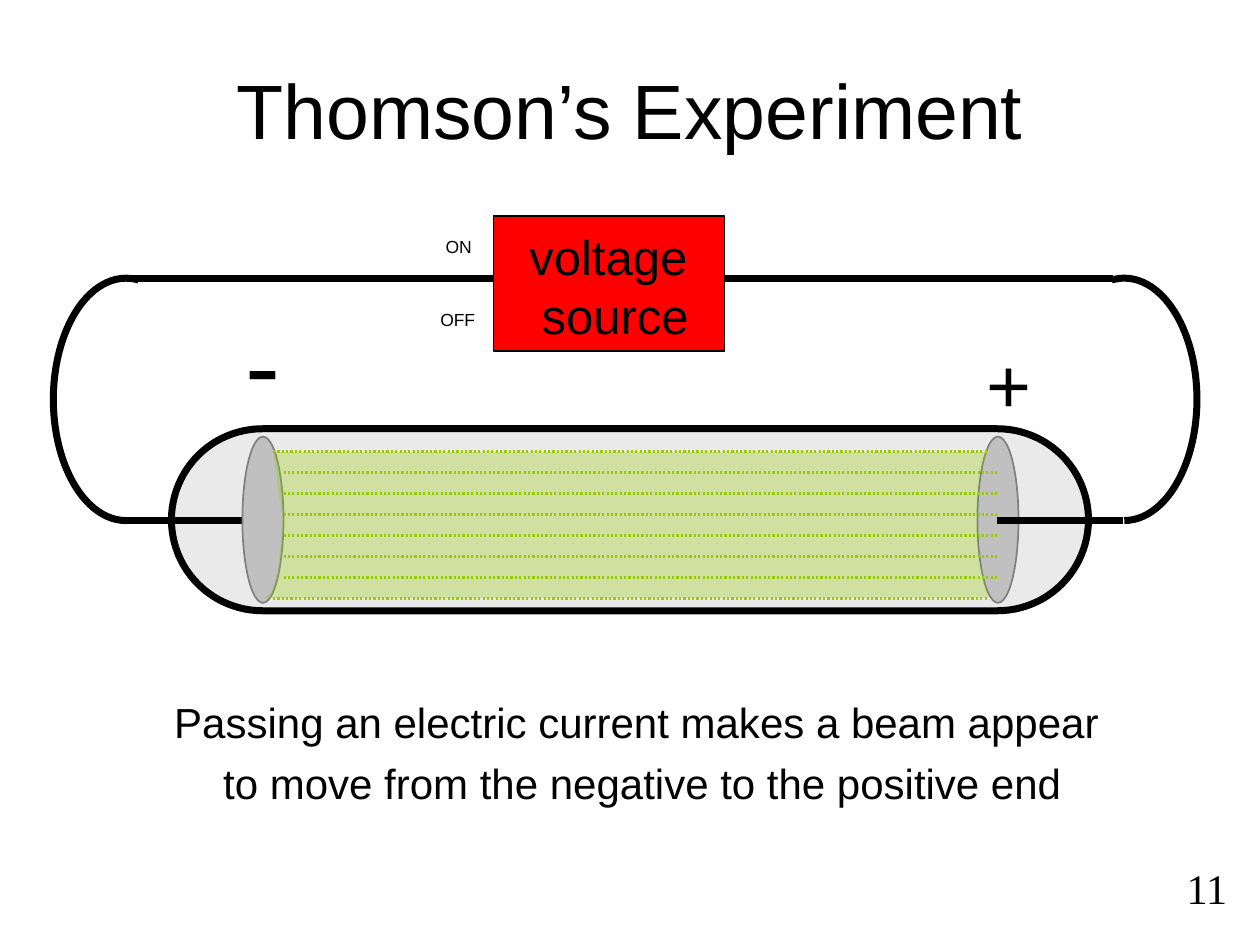
from lxml import etree
from pptx import Presentation
from pptx.dml.color import RGBColor
from pptx.enum.dml import MSO_LINE
from pptx.enum.shapes import MSO_CONNECTOR, MSO_SHAPE
from pptx.enum.text import MSO_AUTO_SIZE, PP_ALIGN
from pptx.oxml.ns import qn
from pptx.util import Pt

STRAIGHT = MSO_CONNECTOR.STRAIGHT
RECTANGLE, ROUNDED = MSO_SHAPE.RECTANGLE, MSO_SHAPE.ROUNDED_RECTANGLE
OVAL, ARC = MSO_SHAPE.OVAL, MSO_SHAPE.ARC
DOTTED = MSO_LINE.ROUND_DOT
LEFT, CENTER = PP_ALIGN.LEFT, PP_ALIGN.CENTER
FIT_SHAPE = MSO_AUTO_SIZE.SHAPE_TO_FIT_TEXT

COLORS = {
    "black": "000000",
    "glass": "C0C0C0",
    "rim": "808080",
    "source": "FF0000",
    "beam": "99CC00",
}
WIRE = 4  # width of wires and tube wall
WIRE_TOP, WIRE_BOTTOM = 159, 297.5


def color(name):
    return RGBColor.from_string(COLORS[name])


def style_shape(shape, fill=None, opacity=100, line=None, line_width=1):
    shape.shadow.inherit = False
    if fill:
        shape.fill.solid()
        shape.fill.fore_color.rgb = color(fill)
        if opacity < 100:
            fill_color = shape.fill._xPr.find(qn("a:solidFill"))[0]
            alpha = etree.SubElement(fill_color, qn("a:alpha"))
            alpha.set("val", str(opacity * 1000))
    else:
        shape.fill.background()
    if line:
        shape.line.color.rgb = color(line)
        shape.line.width = Pt(line_width)
    else:
        shape.line.fill.background()


def add_shape(slide, kind, left, top, width, height, **style):
    shape = slide.shapes.add_shape(kind, Pt(left), Pt(top), Pt(width), Pt(height))
    style_shape(shape, **style)
    return shape


def add_line(slide, x1, y1, x2, y2, line="black", line_width=WIRE, dash=None):
    connector = slide.shapes.add_connector(STRAIGHT, Pt(x1), Pt(y1), Pt(x2), Pt(y2))
    connector.line.color.rgb = color(line)
    connector.line.width = Pt(line_width)
    if dash:
        connector.line.dash_style = dash
    etree.SubElement(connector._element.spPr, qn("a:effectLst"))


def add_text(slide, text, left, top, width, height, size,
             align=LEFT, font="Arial", wrap=False, space_before=0):
    box = slide.shapes.add_textbox(Pt(left), Pt(top), Pt(width), Pt(height))
    text_frame = box.text_frame
    text_frame.word_wrap = wrap
    text_frame.auto_size = FIT_SHAPE
    text_frame.text = text
    for paragraph in text_frame.paragraphs:
        paragraph.alignment = align
        paragraph.space_before = Pt(space_before)
        for run in paragraph.runs:
            run.font.name = font
            run.font.size = Pt(size)
            run.font.color.rgb = color("black")


def add_wire_bend(slide, center_x, start, end):
    """Half an ellipse, clockwise between two angles in degrees."""
    radius = 41.5
    bend = add_shape(slide, ARC, center_x - radius, WIRE_TOP, 2 * radius,
                     WIRE_BOTTOM - WIRE_TOP, line="black", line_width=WIRE)
    # Angles are stored in 60000ths, adjustments scaled by 100000
    bend.adjustments[0] = start * 0.6
    bend.adjustments[1] = end * 0.6


def add_electrode(slide, left):
    add_shape(slide, OVAL, left, 249.5, 23.5, 95, fill="glass", line="rim")


def add_beam_lines(slide):
    count = 8
    for index in range(count):
        start = 156 if index in (0, count - 1) else 162
        y = 258 + 12 * index
        add_line(slide, start, y, start + 408, y, "beam", 1.25, DOTTED)


def add_beam(slide):
    points = [(156, 258), (564, 258), (559.5, 273), (558, 298), (559.5, 321),
              (565, 341.5), (150, 342), (155, 339), (159, 326), (161.5, 297)]
    first, *rest = [(Pt(x), Pt(y)) for x, y in points]
    builder = slide.shapes.build_freeform(*first)
    builder.add_line_segments(rest, close=True)
    style_shape(builder.convert_to_shape(), fill="beam", opacity=31)


def main():
    presentation = Presentation()
    presentation.slide_width, presentation.slide_height = Pt(720), Pt(540)
    slide = presentation.slides.add_slide(presentation.slide_layouts[6])

    # Title and pole signs
    add_text(slide, "Thomson’s Experiment", 47, 32.4, 626, 60, 44, CENTER, wrap=True)
    add_text(slide, "+", 556.5, 188.5, 40, 60, 44)
    add_text(slide, "-", 133, 167, 34.5, 79, 60)

    # Glass tube
    tube = add_shape(slide, ROUNDED, 98, 245, 524, 104,
                     fill="glass", opacity=32, line="black", line_width=WIRE)
    tube.adjustments[0] = 0.5

    # Electrodes and circuit
    add_electrode(slide, 558.5)
    add_line(slide, 144, WIRE_BOTTOM, 72, WIRE_BOTTOM)
    add_wire_bend(slide, 72, 90, 276)
    add_line(slide, 569.5, WIRE_BOTTOM, 642, WIRE_BOTTOM)
    add_wire_bend(slide, 642.5, 264, 90)
    add_line(slide, 72, WIRE_TOP, 636, WIRE_TOP)
    add_electrode(slide, 138.5)

    # Voltage source and switch labels
    add_shape(slide, RECTANGLE, 282, 123.5, 132, 77, fill="source", line="black")
    add_text(slide, "voltage \nsource", 295, 126, 113, 74, 28, CENTER)
    add_text(slide, "OFF", 244.5, 173, 34.5, 19.5, 10)
    add_text(slide, "ON", 247.5, 131.5, 29.5, 19.5, 10)

    # Beam
    add_beam_lines(slide)
    add_beam(slide)

    # Explanation and slide number
    add_text(slide, "Passing an electric current makes a beam appear \n"
             "to move from the negative to the positive end",
             92, 394.5, 550, 70.5, 24, CENTER, space_before=6)
    add_text(slide, "11", 671, 489.5, 38, 36, 24, font="Times New Roman")

    presentation.save("out.pptx")


if __name__ == "__main__":
    main()
